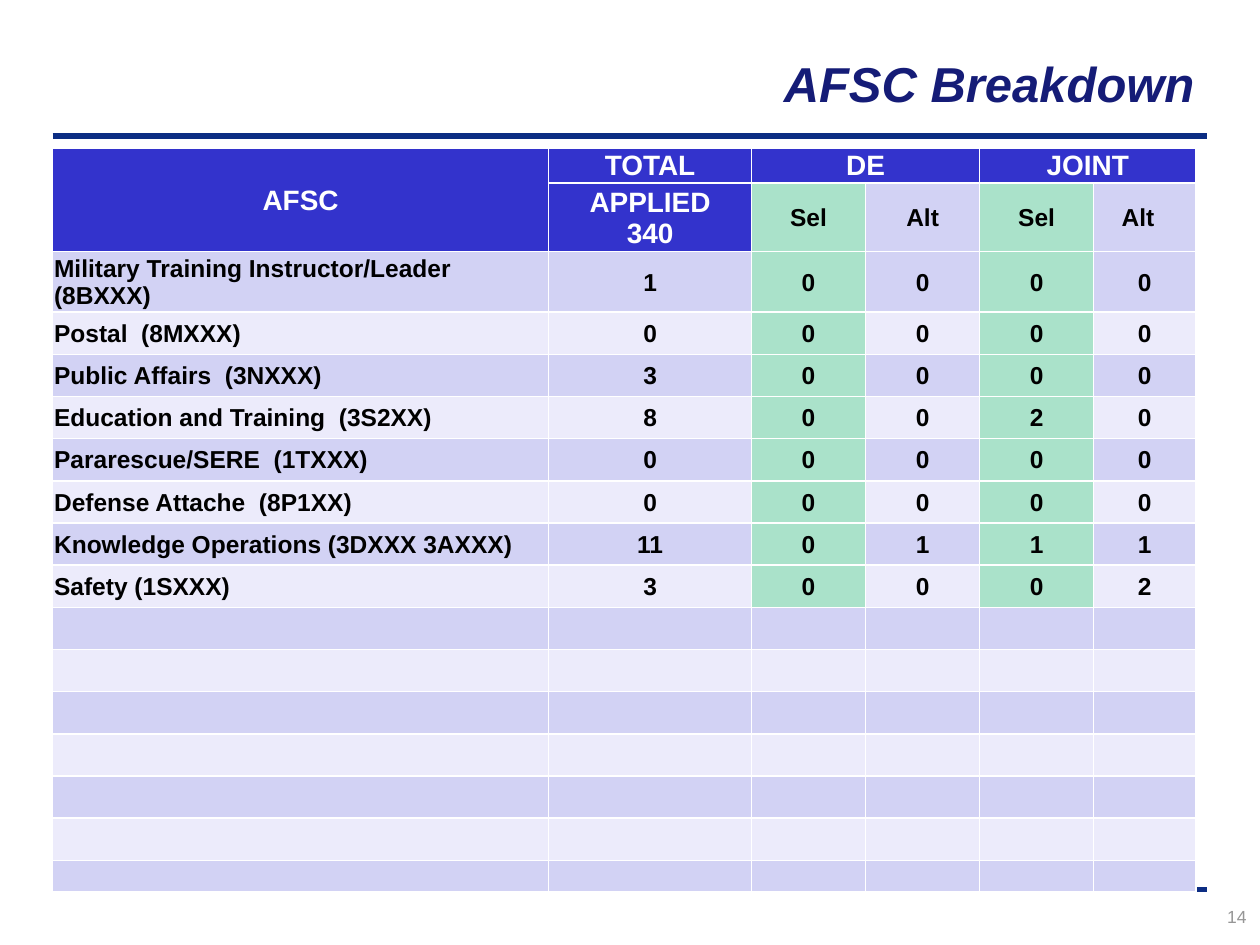
from typing import NamedTuple

from lxml import etree
from pptx import Presentation
from pptx.dml.color import RGBColor
from pptx.enum.shapes import MSO_CONNECTOR
from pptx.enum.text import MSO_ANCHOR, PP_ALIGN
from pptx.oxml.ns import qn
from pptx.util import Cm, Pt

LEFT, CENTER, RIGHT = PP_ALIGN.LEFT, PP_ALIGN.CENTER, PP_ALIGN.RIGHT
TOP, MIDDLE = MSO_ANCHOR.TOP, MSO_ANCHOR.MIDDLE
STRAIGHT = MSO_CONNECTOR.STRAIGHT

FONT = "Arial"
COLORS = {
    "rule": "0C2D83",
    "title": "151C77",
    "page": "969696",
    "header": "3333CC",
    "selected": "AAE2CA",
    "dark_band": "D2D2F4",
    "light_band": "ECEBFB",
    "white": "FFFFFF",
    "black": "000000",
}


class HeaderCell(NamedTuple):
    row: int
    column: int
    text: str
    fill: str = "header"
    color: str = "white"
    size: int = 16
    row_span: int = 1
    column_span: int = 1
    right_margin: float = 0.03


class Specialty(NamedTuple):
    name: str
    counts: tuple  # applied, DE sel, DE alt, joint sel, joint alt


HEADERS = [
    HeaderCell(0, 0, "AFSC", row_span=2),
    HeaderCell(0, 1, "TOTAL"),
    HeaderCell(0, 2, "DE", column_span=2),
    HeaderCell(0, 4, "JOINT", column_span=2),
    HeaderCell(1, 1, "APPLIED\n340"),
    HeaderCell(1, 2, "Sel", "selected", "black", 14),
    HeaderCell(1, 3, "Alt", "dark_band", "black", 14),
    HeaderCell(1, 4, "Sel", "selected", "black", 14),
    HeaderCell(1, 5, "Alt", "dark_band", "black", 14, right_margin=0.3),
]
SPECIALTIES = [
    Specialty("Military Training Instructor/Leader (8BXXX)", (1, 0, 0, 0, 0)),
    Specialty("Postal  (8MXXX)", (0, 0, 0, 0, 0)),
    Specialty("Public Affairs  (3NXXX)", (3, 0, 0, 0, 0)),
    Specialty("Education and Training  (3S2XX)", (8, 0, 0, 2, 0)),
    Specialty("Pararescue/SERE  (1TXXX)", (0, 0, 0, 0, 0)),
    Specialty("Defense Attache  (8P1XX)", (0, 0, 0, 0, 0)),
    Specialty("Knowledge Operations (3DXXX 3AXXX)", (11, 0, 1, 1, 1)),
    Specialty("Safety (1SXXX)", (3, 0, 0, 0, 2)),
]
HEADER_ROWS = 2
SELECTED_COLUMNS = (2, 4)
COLUMN_WIDTHS = [10, 4.09, 2.3, 2.3, 2.3, 2.06]
ROW_HEIGHTS = [0.71, 1.37, 0.86] + [0.85] * 13 + [0.64]


def rgb(name: str) -> RGBColor:
    return RGBColor.from_string(COLORS[name])


def write_text(frame, text: str, *, size: int, color: str, align=CENTER,
               bold: bool = False, italic: bool = False) -> None:
    """Write one paragraph per line of text, all in the same format."""
    for index, line in enumerate(text.split("\n")):
        paragraph = frame.paragraphs[0] if index == 0 else frame.add_paragraph()
        paragraph.alignment = align
        run = paragraph.add_run()
        run.text = line
        run.font.name = FONT
        run.font.size = Pt(size)
        run.font.bold = bold
        run.font.italic = italic
        run.font.color.rgb = rgb(color)


def add_rule(slide, top: float) -> None:
    rule = slide.shapes.add_connector(STRAIGHT, Cm(1.06), Cm(top), Cm(24.34), Cm(top))
    rule.line.color.rgb = rgb("rule")
    rule.line.width = Pt(3)
    etree.SubElement(rule._element.spPr, qn("a:effectLst"))


def style_cell(cell, fill: str, right_margin: float = 0.03) -> None:
    """Set borders first, since they precede the fill in the cell's XML."""
    properties = cell._tc.get_or_add_tcPr()
    for side in ("lnL", "lnR", "lnT", "lnB"):
        border = etree.SubElement(properties, qn(f"a:{side}"), w=str(Pt(1)))
        solid = etree.SubElement(border, qn("a:solidFill"))
        etree.SubElement(solid, qn("a:srgbClr"), val=COLORS["white"])
    cell.fill.solid()
    cell.fill.fore_color.rgb = rgb(fill)
    cell.vertical_anchor = MIDDLE
    cell.margin_left = cell.margin_top = Cm(0.03)
    cell.margin_right = Cm(right_margin)
    cell.margin_bottom = 0


def add_header(table, header: HeaderCell) -> None:
    cell = table.cell(header.row, header.column)
    if header.row_span > 1 or header.column_span > 1:
        cell.merge(table.cell(header.row + header.row_span - 1,
                              header.column + header.column_span - 1))
    style_cell(cell, header.fill, header.right_margin)
    write_text(cell.text_frame, header.text, size=header.size,
               color=header.color, bold=True)


def add_body_row(table, index: int) -> None:
    row = index + HEADER_ROWS
    band = "light_band" if index % 2 else "dark_band"
    filled = index < len(SPECIALTIES)
    for column in range(len(COLUMN_WIDTHS)):
        cell = table.cell(row, column)
        selected = filled and column in SELECTED_COLUMNS
        style_cell(cell, "selected" if selected else band)
        if filled:
            specialty = SPECIALTIES[index]
            text = str(specialty.counts[column - 1]) if column else specialty.name
            write_text(cell.text_frame, text, size=14, color="black",
                       align=CENTER if column else LEFT, bold=True)
        else:
            # Keep an empty line from stretching the row
            paragraph = cell.text_frame.paragraphs[0]
            etree.SubElement(paragraph._p, qn("a:endParaRPr"), sz="1400")


def add_breakdown_table(slide) -> None:
    frame = slide.shapes.add_table(
        len(ROW_HEIGHTS), len(COLUMN_WIDTHS), Cm(1.06), Cm(2.98),
        Cm(sum(COLUMN_WIDTHS)), Cm(sum(ROW_HEIGHTS)))
    table = frame.table
    for column, width in zip(table.columns, COLUMN_WIDTHS):
        column.width = Cm(width)
    for row, height in zip(table.rows, ROW_HEIGHTS):
        row.height = Cm(height)
    for header in HEADERS:
        add_header(table, header)
    for index in range(len(ROW_HEIGHTS) - HEADER_ROWS):
        add_body_row(table, index)


def main() -> None:
    presentation = Presentation()
    presentation.slide_width = Cm(25.4)
    presentation.slide_height = Cm(19.05)
    slide = presentation.slides.add_slide(presentation.slide_layouts[5])

    # Rules above and below the table
    for top in (17.93, 2.74):
        add_rule(slide, top)

    # Title
    title = slide.shapes.title
    title.left, title.top, title.width, title.height = Cm(4.01), Cm(0.84), Cm(20.32), Cm(1.27)
    title.text_frame.vertical_anchor = TOP
    title.text_frame.margin_top = Cm(0.23)
    title.text_frame.margin_bottom = 0
    write_text(title.text_frame, "AFSC Breakdown", size=28, color="title",
               align=RIGHT, bold=True, italic=True)

    # Page number
    page = slide.shapes.add_textbox(Cm(22.2), Cm(18.14), Cm(3.18), Cm(0.84))
    page.text_frame.word_wrap = True
    write_text(page.text_frame, "14", size=10, color="page", align=RIGHT)

    # Table
    add_breakdown_table(slide)

    presentation.save("out.pptx")


if __name__ == "__main__":
    main()
